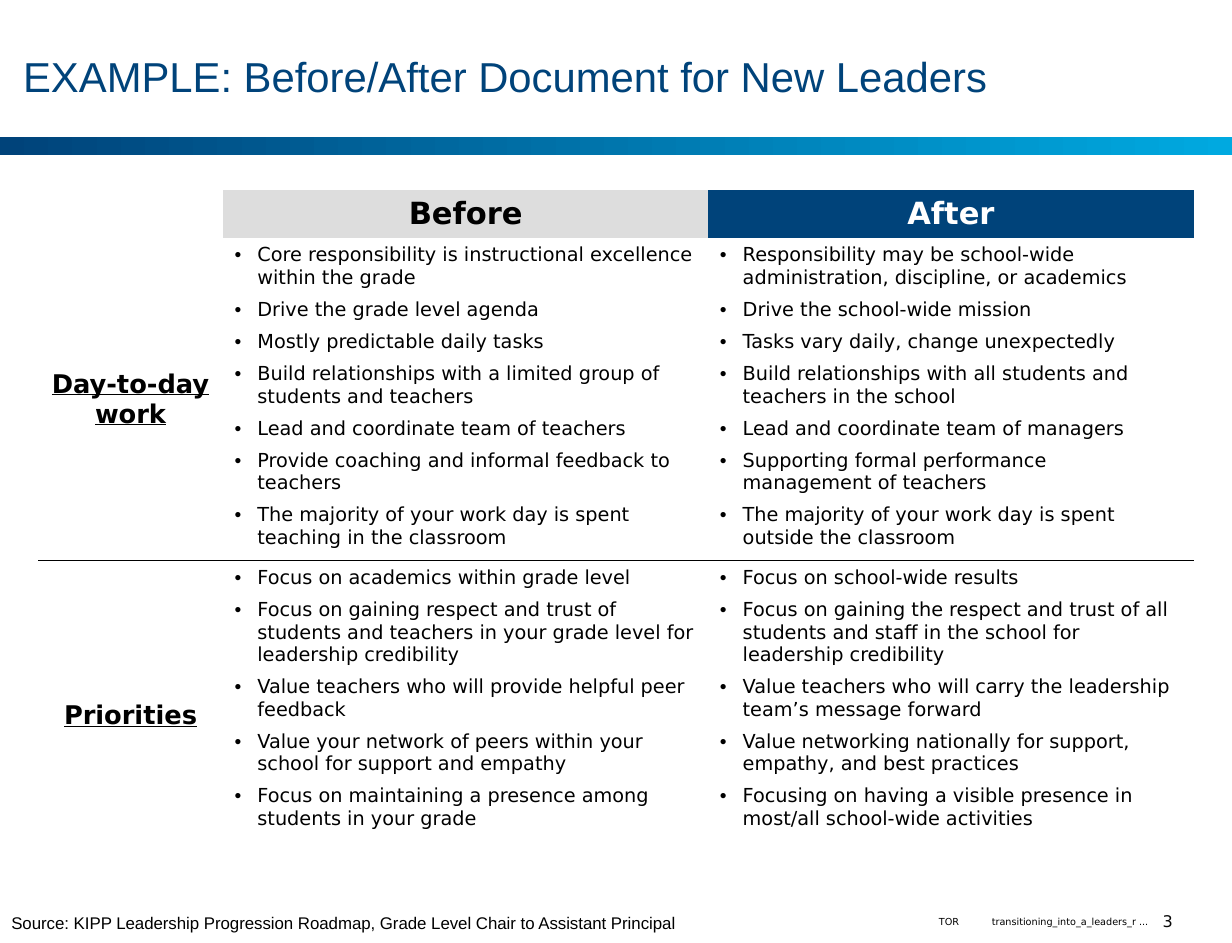
from lxml import etree
from pptx import Presentation
from pptx.dml.color import RGBColor
from pptx.enum.shapes import MSO_SHAPE
from pptx.enum.text import MSO_ANCHOR as ANCHOR, PP_ALIGN as ALIGN
from pptx.oxml import parse_xml
from pptx.oxml.ns import nsdecls, qn
from pptx.util import Pt

COLORS = {"navy": "00437A", "sky": "00A9E0", "gray": "DDDDDD",
          "black": "000000", "ink": "080808", "white": "FFFFFF"}
SANS = "DejaVu Sans"


def add_run(p, text, color="black", **fmt):
    r = p.add_run()
    r.text = text
    r.font.color.rgb = RGBColor.from_string(COLORS[color])
    for name, value in fmt.items():
        setattr(r.font, name, value)


def border(cell, side):
    cell._tc.get_or_add_tcPr().insert(0, parse_xml(
        f'<a:{side} {nsdecls("a")} w="12700"><a:solidFill>'
        f'<a:srgbClr val="{COLORS["black"]}"/></a:solidFill></a:{side}>'))


prs = Presentation()
prs.slide_width, prs.slide_height = Pt(766.08), Pt(586.08)
s = prs.slides.add_slide(prs.slide_layouts[6])

# Gradient band under the title
band = s.shapes.add_shape(MSO_SHAPE.RECTANGLE, 0, Pt(85), prs.slide_width, Pt(11.5))
band.shadow.inherit = False
band.line.fill.background()
band.fill.gradient()
band.fill.gradient_angle = 0
for stop, color in zip(band.fill.gradient_stops, ("navy", "sky")):
    stop.color.rgb = RGBColor.from_string(COLORS[color])

# Title and footer: text, box, insets, wrap, anchor, alignment, color, font, size
texts = [
    ("EXAMPLE: Before/After Document for New Leaders", (14.4, 11.5, 751.6, 71.3),
     (0, 0, 5.8, 0), True, ANCHOR.MIDDLE, ALIGN.LEFT, "navy", "Arial", 26),
    ("Source: KIPP Leadership Progression Roadmap, Grade Level Chair to Assistant Principal",
     (0, 563.4, 436.3, 20), (7.2, 3.6, 7.2, 3.6), False, ANCHOR.TOP, ALIGN.LEFT,
     "black", "Arial", 10.5),
    ("TOR", (580.3, 569.2, 16.6, 7.2), (3.6, 0, 0, 0), False, ANCHOR.MIDDLE, ALIGN.LEFT,
     "black", SANS, 6),
    ("transitioning_into_a_leaders_r ...", (608.4, 569.2, 105.6, 7.2), (3.6, 0, 0, 0),
     False, ANCHOR.MIDDLE, ALIGN.RIGHT, "black", SANS, 6),
    ("3", (713.5, 569.2, 25.2, 7.2), (0, 0, 0, 0), False, ANCHOR.MIDDLE, ALIGN.CENTER,
     "ink", SANS, 10),
]
for text, box, insets, wrap, anchor, align, color, font, size in texts:
    tf = s.shapes.add_textbox(*map(Pt, box)).text_frame
    for side, inset in zip(("left", "top", "right", "bottom"), insets):
        setattr(tf, f"margin_{side}", Pt(inset))
    tf.word_wrap, tf.vertical_anchor = wrap, anchor
    p = tf.paragraphs[0]
    p.alignment = align
    add_run(p, text, color, name=font, size=Pt(size))

# Before/after table, with no built-in style
col_widths, row_heights = (115, 301.8, 301.8), (29, 196, 193)
frame = s.shapes.add_table(3, 3, Pt(23.7), Pt(118), Pt(sum(col_widths)), Pt(sum(row_heights)))
table = frame.table
table.first_row = table.horz_banding = False
table._tbl.tblPr.find(qn("a:tableStyleId")).text = "{2D5ABB26-0587-4C30-8999-92F81FD0307C}"
for col, width in zip(table.columns, col_widths):
    col.width = Pt(width)
for row, height in zip(table.rows, row_heights):
    row.height = Pt(height)
table.cell(0, 0).fill.background()

# Column and row headings: row, column, text, fill, text color, size, underline
headings = [
    (0, 1, "Before", "gray", "black", 19, False),
    (0, 2, "After", "navy", "white", 19, False),
    (1, 0, "Day-to-day work", "white", "black", 16, True),
    (2, 0, "Priorities", "white", "black", 16, True),
]
for row, col, text, fill, color, size, underline in headings:
    cell = table.cell(row, col)
    cell.vertical_anchor = ANCHOR.MIDDLE
    cell.fill.solid()
    cell.fill.fore_color.rgb = RGBColor.from_string(COLORS[fill])
    p = cell.text_frame.paragraphs[0]
    p.alignment = ALIGN.CENTER
    add_run(p, text, color, name=SANS, size=Pt(size), bold=True, underline=underline)

# Bulleted cells
bullets = {
    (1, 1): ["Core responsibility is instructional excellence within the grade",
             "Drive the grade level agenda",
             "Mostly predictable daily tasks",
             "Build relationships with a limited group of students and teachers",
             "Lead and coordinate team of teachers",
             "Provide coaching and informal feedback to teachers",
             "The majority of your work day is spent teaching in the classroom"],
    (1, 2): ["Responsibility may be school-wide administration, discipline, or academics",
             "Drive the school-wide mission",
             "Tasks vary daily, change unexpectedly",
             "Build relationships with all students and teachers in the school",
             "Lead and coordinate team of managers",
             "Supporting formal performance management of teachers",
             "The majority of your work day is spent outside the classroom"],
    (2, 1): ["Focus on academics within grade level",
             "Focus on gaining respect and trust of students and teachers in your grade level "
             "for leadership credibility",
             "Value teachers who will provide helpful peer feedback",
             "Value your network of peers within your school for support and empathy",
             "Focus on maintaining a presence among students in your grade"],
    (2, 2): ["Focus on school-wide results",
             "Focus on gaining the respect and trust of all students and staff in the school "
             "for leadership credibility",
             "Value teachers who will carry the leadership team’s message forward",
             "Value networking nationally for support, empathy, and best practices",
             "Focusing on having a visible presence in most/all school-wide activities"],
}
for (row, col), items in bullets.items():
    cell = table.cell(row, col)
    cell.fill.background()
    tf = cell.text_frame
    for i, item in enumerate(items):
        p = tf.add_paragraph() if i else tf.paragraphs[0]
        pPr = p._p.get_or_add_pPr()
        pPr.set("marL", str(Pt(14.2)))
        pPr.set("indent", str(-Pt(14.2)))
        etree.SubElement(pPr, qn("a:buFont"), typeface="Arial")
        etree.SubElement(pPr, qn("a:buChar"), char="•")
        if i:
            p.space_before = Pt(5.8)
        add_run(p, item, name=SANS, size=Pt(12))

# Paragraph ends in the body size, so that they do not stretch the rows
for cell in table.iter_cells():
    for p in cell.text_frame.paragraphs:
        etree.SubElement(p._p, qn("a:endParaRPr"), sz="1200")

# Rule between the two body rows
for col in range(3):
    border(table.cell(1, col), "lnB")
    border(table.cell(2, col), "lnT")

prs.save("out.pptx")
